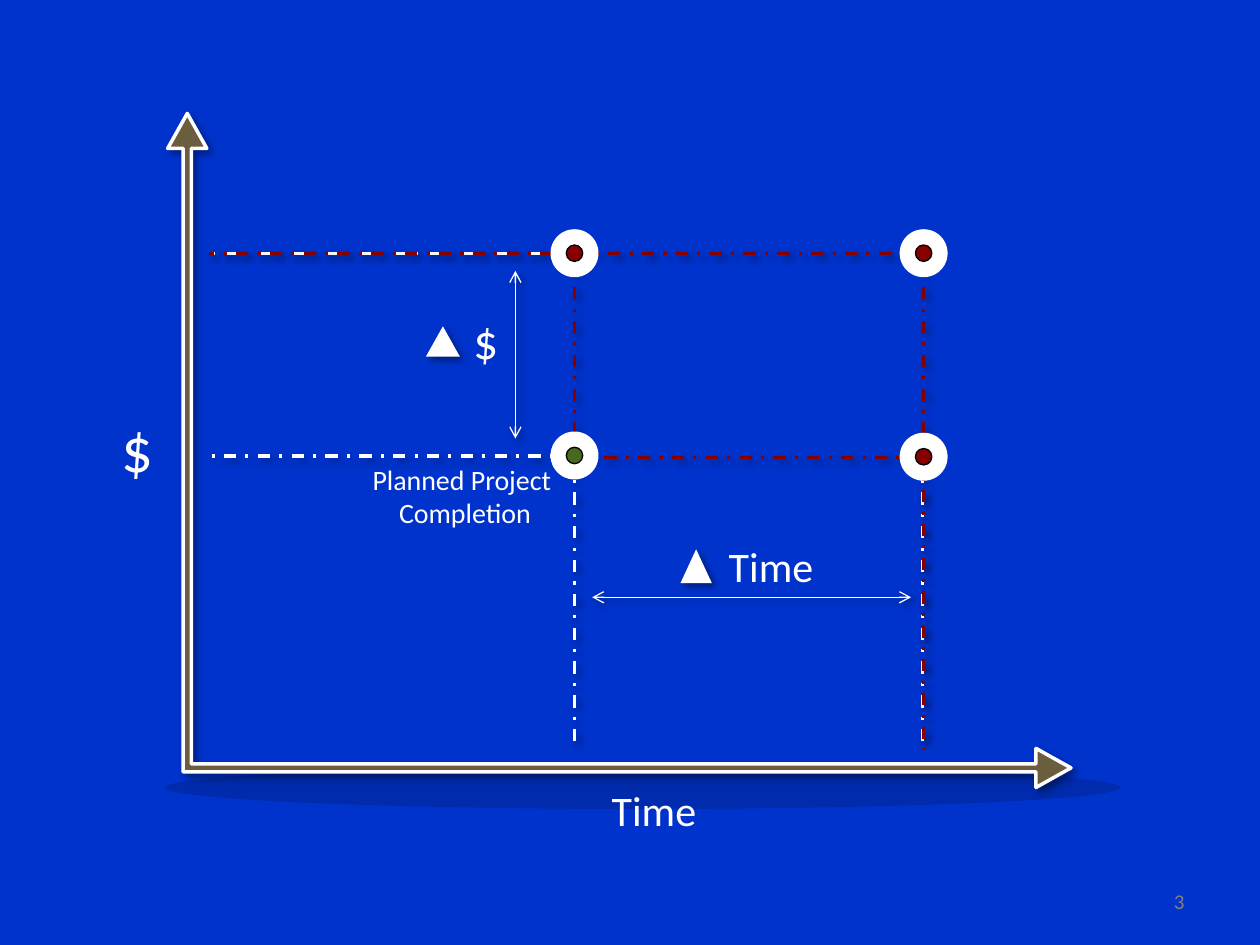
import pptx
import pptx.util
import pptx.dml.color
import pptx.enum.dml
import pptx.enum.shapes
import pptx.enum.text
import pptx.oxml
import pptx.oxml.ns
from pptx.util import Pt

SHAPES = pptx.enum.shapes.MSO_SHAPE
ALIGN = pptx.enum.text.PP_ALIGN
qn = pptx.oxml.ns.qn
NS = 'xmlns:a="http://schemas.openxmlformats.org/drawingml/2006/main"'
SHADOW = (f'<a:outerShdw {NS} blurRad="50800" dist="38100" dir="2700000" algn="tl" rotWithShape="0">'
          '<a:srgbClr val="000000"><a:alpha val="40000"/></a:srgbClr></a:outerShdw>')

WHITE, BLACK, RED, GREEN = "FFFFFF", "000000", "860000", "48681E"
BLUE, BROWN, GREY = "0033CC", "6A5E3E", "808080"


def colour(code):
    return pptx.dml.color.RGBColor.from_string(code)


def write_text(frame, text, size=24, font="Calibri", color=WHITE, align=ALIGN.CENTER, wrap=False):
    frame.word_wrap = wrap
    for index, row in enumerate(text.split("\n")):
        para = frame.paragraphs[0] if index == 0 else frame.add_paragraph()
        para.alignment = align
        span = para.add_run()
        span.text = row
        span.font.size = Pt(size)
        span.font.name = font
        span.font.color.rgb = colour(color)


class Diagram:
    """Holds the style and the current page; all lengths are points."""

    def __init__(self, page):
        self.page = page
        self.thin, self.dashed = 0.75, 1.75

    def background(self, color):
        fill = self.page.background.fill
        fill.solid()
        fill.fore_color.rgb = colour(color)

    def text(self, left, top, width, height, text, **style):
        box = self.page.shapes.add_textbox(Pt(left), Pt(top), Pt(width), Pt(height))
        write_text(box.text_frame, text, **style)

    def shape(self, kind, left, top, width, height, fill, line=None, weight=0.75,
              shadow=False, opacity=None):
        shape = self.page.shapes.add_shape(kind, Pt(left), Pt(top), Pt(width), Pt(height))
        shape.fill.solid()
        shape.fill.fore_color.rgb = colour(fill)
        if opacity:
            solid = shape._element.spPr.find(".//" + qn("a:srgbClr"))
            solid.append(pptx.oxml.parse_xml(f'<a:alpha {NS} val="{opacity * 1000}"/>'))
        if line:
            shape.line.color.rgb = colour(line)
            shape.line.width = Pt(weight)
        else:
            shape.line.fill.background()
        shape.shadow.inherit = False
        if shadow:
            effects = shape._element.spPr.find(qn("a:effectLst"))
            effects.append(pptx.oxml.parse_xml(SHADOW))
        return shape

    def line(self, x1, y1, x2, y2, color, weight):
        line = self.page.shapes.add_connector(
            pptx.enum.shapes.MSO_CONNECTOR.STRAIGHT, Pt(x1), Pt(y1), Pt(x2), Pt(y2))
        line.line.color.rgb = colour(color)
        line.line.width = Pt(weight)
        effects = pptx.oxml.parse_xml(f"<a:effectLst {NS}>{SHADOW}</a:effectLst>")
        line._element.spPr.append(effects)
        return line

    def guide(self, x1, y1, x2, y2, color):
        line = self.line(x1, y1, x2, y2, color, self.dashed)
        line.line.dash_style = pptx.enum.dml.MSO_LINE.DASH_DOT

    def span_arrow(self, x1, y1, x2, y2):
        line = self.line(x1, y1, x2, y2, WHITE, self.thin)
        for end in ("headEnd", "tailEnd"):
            line.line._get_or_add_ln().append(
                pptx.oxml.parse_xml(f'<a:{end} {NS} type="arrow"/>'))

    def delta(self, left, top, width, height):
        self.shape(SHAPES.FLOWCHART_EXTRACT, left, top, width, height, WHITE, shadow=True)

    def marker(self, x, y, color):
        for size, fill, line, weight in ((25.9, WHITE, WHITE, 1.5), (9.4, color, BLACK, 0.75)):
            self.shape(SHAPES.OVAL, x - size / 2, y - size / 2, size, size, fill, line, weight)


def main():
    deck = pptx.Presentation()
    deck.slide_width, deck.slide_height = Pt(720), Pt(540)
    diagram = Diagram(deck.slides.add_slide(deck.slide_layouts[6]))
    diagram.background(BLUE)

    # Page number and the soft ellipse under the axes
    diagram.text(576.7, 504, 107.3, 21.6, "3", size=12, color=GREY, align=ALIGN.RIGHT, wrap=True)
    diagram.shape(SHAPES.OVAL, 94.3, 437.8, 545.8, 24.5, BLACK, opacity=15)

    # Cost and time differences
    diagram.delta(243.4, 186.5, 19.4, 17.3)
    diagram.span_arrow(294.5, 154.8, 294.5, 250.6)
    diagram.text(262.8, 174.2, 29.5, 41, "$", size=28)
    diagram.delta(388.8, 313.9, 18, 19.4)
    diagram.span_arrow(338.4, 341.3, 520.6, 341.3)
    diagram.text(408.2, 305.3, 64.8, 36, "Time")

    # Axis labels
    diagram.text(61.2, 230.4, 34.6, 51.1, "$", size=36)
    diagram.text(341.3, 445, 64.8, 36, "Time")

    # Guide lines and the planned point's label
    start, planned, late = 119.5, 328.3, 527.8
    high, low, base = 144.7, 260.6, 427
    diagram.guide(planned, low, start, low, WHITE)
    diagram.guide(planned, low + 1.4, planned, base, WHITE)
    diagram.guide(526.3, 261.4, 329.8, 261.4, RED)
    diagram.guide(527, 262, 527, 428.4, WHITE)
    diagram.guide(planned, high, 120.2, high, WHITE)
    diagram.guide(planned, high, planned, 261.4, RED)
    diagram.text(205.2, 260.6, 121, 46.1, "Planned Project \nCompletion", size=16)
    diagram.guide(528.5, high, start, high, RED)
    diagram.guide(late, high, late, 427.7, RED)

    # Markers at the crossings
    for x, y, color in ((late, high, RED), (late, 261, RED),
                        (planned, high, RED), (planned, 260.3, GREEN)):
        diagram.marker(x, y, color)

    # Both axes in one bent arrow
    axes = diagram.shape(SHAPES.LEFT_UP_ARROW, 161.3, -0.7, 385.2, 516.2, BROWN,
                         WHITE, 2, shadow=True)
    axes.rotation = 90
    for index, value in enumerate((0.012, 0.029, 0.052)):
        axes.adjustments[index] = value

    deck.save("out.pptx")


if __name__ == "__main__":
    main()
